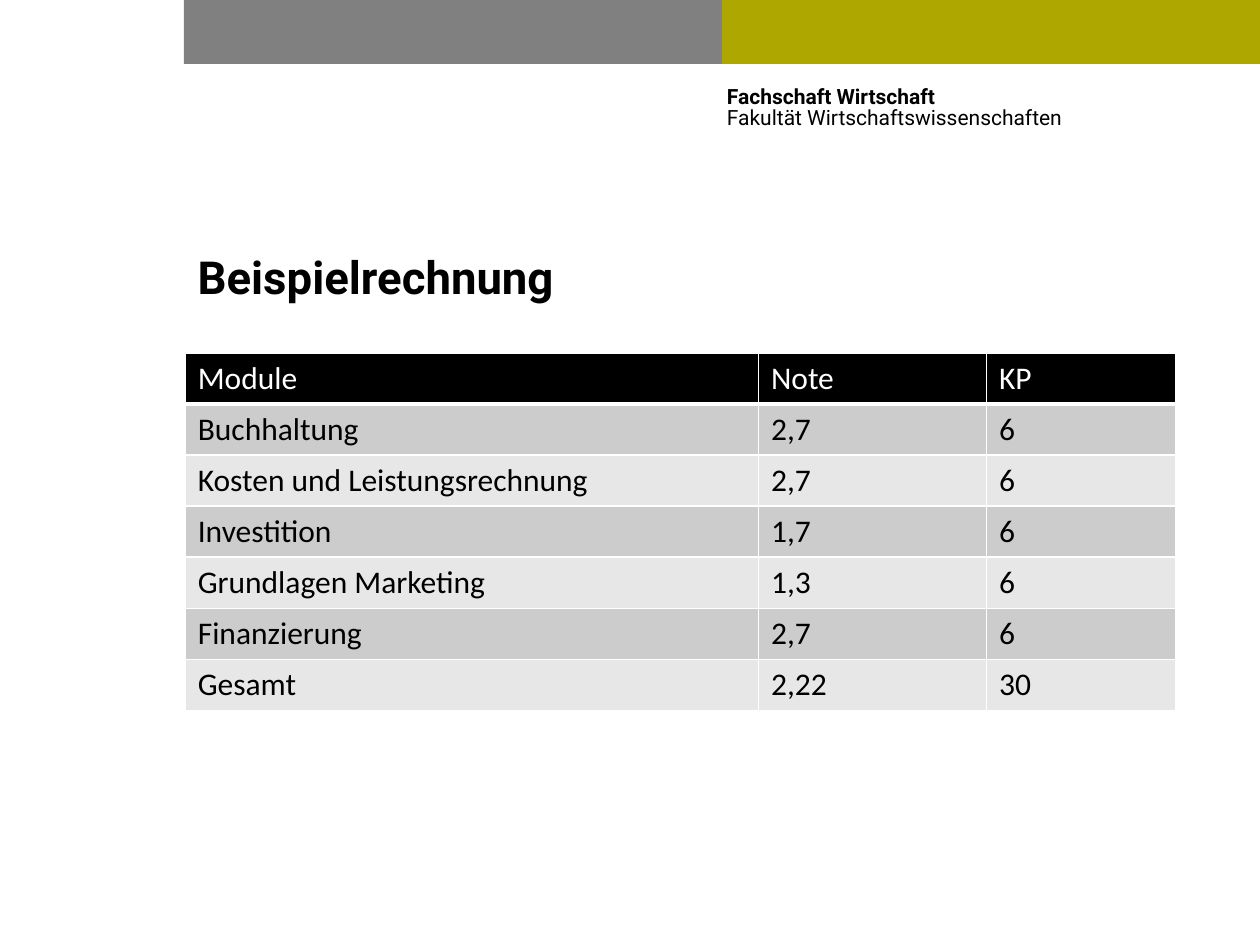
from dataclasses import dataclass

from lxml import etree
from pptx import Presentation
from pptx.dml.color import RGBColor
from pptx.enum import shapes, text
from pptx.oxml import ns
from pptx.util import Pt

BLACK, WHITE = "000000", "FFFFFF"
BANDS = ("CCCCCC", "E7E7E7")
COLS = (327.6, 130.32, 108)
ROW_H = 29.2
ROWS = (
    ("Module", "Note", "KP"),
    ("Buchhaltung", "2,7", "6"),
    ("Kosten und Leistungsrechnung", "2,7", "6"),
    ("Investition", "1,7", "6"),
    ("Grundlagen Marketing", "1,3", "6"),
    ("Finanzierung", "2,7", "6"),
    ("Gesamt", "2,22", "30"),
)


@dataclass
class Box:
    left: float
    top: float
    width: float
    height: float

    def place(self) -> tuple:
        return Pt(self.left), Pt(self.top), Pt(self.width), Pt(self.height)


@dataclass
class Line:
    words: str
    size: float
    bold: bool = False


def paint(target, color: str) -> None:
    target.fill.solid()
    target.fill.fore_color.rgb = RGBColor.from_string(color)


def style(para, face: str, size: float, color: str, bold: bool = False) -> None:
    for run in para.runs:
        font = run.font
        font.name, font.size, font.bold = face, Pt(size), bold
        font.color.rgb = RGBColor.from_string(color)


def add_bar(slide, box: Box, color: str) -> None:
    bar = slide.shapes.add_shape(shapes.MSO_SHAPE.RECTANGLE, *box.place())
    bar.shadow.inherit = False
    paint(bar, color)
    bar.line.fill.background()


def add_text(slide, box: Box, lines: list[Line], leading: float | None = None):
    frame = slide.shapes.add_textbox(*box.place()).text_frame
    frame.word_wrap = True
    frame.text = "\n".join(line.words for line in lines)
    for para, line in zip(frame.paragraphs, lines):
        style(para, "Roboto", line.size, BLACK, line.bold)
        if leading:
            para.line_spacing = Pt(leading)
    return frame


def add_edges(cell, head: bool) -> None:
    props = cell._tc.get_or_add_tcPr()
    for side in ("L", "R", "T", "B"):
        width = 3 if head and side == "B" else 1
        edge = etree.SubElement(props, ns.qn(f"a:ln{side}"), w=str(Pt(width)))
        fill = etree.SubElement(edge, ns.qn("a:solidFill"))
        etree.SubElement(fill, ns.qn("a:srgbClr"), val=WHITE)


def add_grades(slide, left: float, top: float) -> None:
    box = Box(left, top, sum(COLS), ROW_H * len(ROWS))
    table = slide.shapes.add_table(len(ROWS), len(COLS), *box.place()).table
    for col, width in zip(table.columns, COLS):
        col.width = Pt(width)
    for i, row in enumerate(ROWS):
        head = i == 0
        table.rows[i].height = Pt(ROW_H)
        for j, words in enumerate(row):
            cell = table.cell(i, j)
            cell.text_frame.text = words
            style(cell.text_frame.paragraphs[0], "Calibri", 18, WHITE if head else BLACK)
            add_edges(cell, head)
            paint(cell, BLACK if head else BANDS[(i - 1) % 2])


def main() -> None:
    deck = Presentation()
    deck.slide_width, deck.slide_height = Pt(720), Pt(540)
    slide = deck.slides.add_slide(deck.slide_layouts[6])

    # Top bars
    bar_w = 307.44
    for i, color in enumerate(("808080", "AEA700")):
        add_bar(slide, Box(720 - bar_w * (2 - i), 0, bar_w, 36.5), color)

    # Department
    frame = add_text(slide, Box(415.44, 50.4, 276.48, 39.6), [
        Line("Fachschaft Wirtschaft", 12, True),
        Line("Fakultät Wirtschaftswissenschaften", 12),
    ], leading=12)
    frame.margin_left = frame.margin_right = frame.margin_top = frame.margin_bottom = 0

    # Title
    title = add_text(slide, Box(105.84, 130.32, 565.92, 54.72),
                     [Line("Beispielrechnung", 26, True)])
    title.vertical_anchor = text.MSO_ANCHOR.MIDDLE

    # Grades
    add_grades(slide, 105.84, 201.6)
    deck.save("out.pptx")


if __name__ == "__main__":
    main()
